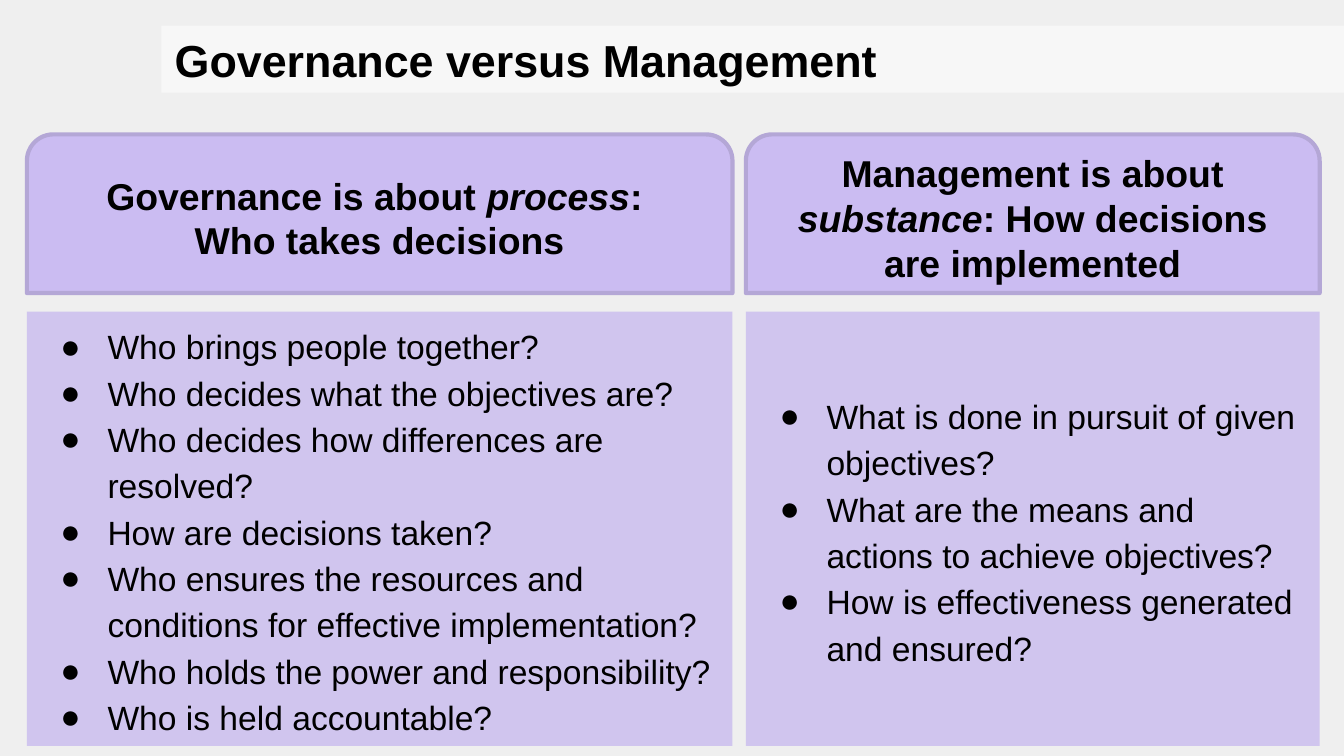
from pptx import Presentation
from pptx.dml.color import RGBColor
from pptx.enum.shapes import MSO_SHAPE
from pptx.enum.text import MSO_ANCHOR, MSO_AUTO_SIZE, PP_ALIGN
from pptx.oxml.ns import qn
from pptx.util import Pt
from lxml import etree

TAB_SHAPE = MSO_SHAPE.ROUND_2_SAME_RECTANGLE
MIDDLE = MSO_ANCHOR.MIDDLE
NO_AUTOFIT = MSO_AUTO_SIZE.NONE
LEFT, CENTER = PP_ALIGN.LEFT, PP_ALIGN.CENTER

BLACK = RGBColor(0x00, 0x00, 0x00)
WHITE = RGBColor(0xFF, 0xFF, 0xFF)
BACKGROUND = RGBColor(0xEF, 0xEF, 0xEF)
PANEL = RGBColor(0xC7, 0xB8, 0xEE)
HEADING = RGBColor(0xCB, 0xBC, 0xF2)
HEADING_LINE = RGBColor(0xB4, 0xA7, 0xD6)

FONT = "Arial"
INSET = Pt(7.2)
HEADING_TOP, HEADING_HEIGHT = 72, 85
LIST_TOP, LIST_HEIGHT = 167, 232.6

# Each heading line is a list of (text, italic) spans.
COLUMNS = [
    {
        "left": 14.4,
        "width": 378,
        "heading": [
            [("Governance is about ", False), ("process", True), (": ", False)],
            [("Who takes decisions", False)],
        ],
        "questions": [
            "Who brings people together?",
            "Who decides what the objectives are?",
            "Who decides how differences are resolved?",
            "How are decisions taken?",
            "Who ensures the resources and conditions for effective implementation?",
            "Who holds the power and responsibility?",
            "Who is held accountable?",
        ],
    },
    {
        "left": 399.6,
        "width": 307.4,
        "heading": [
            [
                ("Management is about ", False),
                ("substance", True),
                (": How decisions are implemented", False),
            ],
        ],
        "questions": [
            "What is done in pursuit of given objectives?",
            "What are the means and actions to achieve objectives?",
            "How is effectiveness generated and ensured?",
        ],
    },
]


def place(shape, left, top, width, height):
    shape.left, shape.top = Pt(left), Pt(top)
    shape.width, shape.height = Pt(width), Pt(height)


def fill_shape(shape, color, opacity=100):
    """Fill the shape with a solid colour; opacity is in percent."""
    shape.fill.solid()
    shape.fill.fore_color.rgb = color
    if opacity < 100:
        color_element = next(shape.element.spPr.iter(qn("a:srgbClr")))
        etree.SubElement(color_element, qn("a:alpha"), val=str(opacity * 1000))


def prepare_frame(shape):
    frame = shape.text_frame
    frame.word_wrap = True
    frame.auto_size = NO_AUTOFIT
    frame.vertical_anchor = MIDDLE
    frame.margin_left = frame.margin_right = INSET
    frame.margin_top = frame.margin_bottom = INSET
    return frame


def format_font(font, size, bold=False):
    font.name = FONT
    font.size = Pt(size)
    font.bold = bold
    font.color.rgb = BLACK


def add_bullet(para):
    properties = para._p.get_or_add_pPr()
    properties.set("marL", str(Pt(36)))
    properties.set("indent", str(Pt(-25.2)))
    bullet_color = etree.SubElement(properties, qn("a:buClr"))
    etree.SubElement(bullet_color, qn("a:srgbClr"), val=str(BLACK))
    etree.SubElement(properties, qn("a:buFont"), typeface=FONT)
    etree.SubElement(properties, qn("a:buChar"), char="●")


def set_title(title, text):
    place(title, 86.4, 13.7, 633.6, 36)
    fill_shape(title, WHITE, 55)
    frame = prepare_frame(title)
    frame.text = text
    para = frame.paragraphs[0]
    para.alignment = LEFT
    format_font(para.runs[0].font, 24, bold=True)


def add_heading(page, left, width, lines):
    heading = page.shapes.add_shape(
        TAB_SHAPE, Pt(left), Pt(HEADING_TOP), Pt(width), Pt(HEADING_HEIGHT)
    )
    heading.shadow.inherit = False
    fill_shape(heading, HEADING)
    heading.line.color.rgb = HEADING_LINE
    heading.line.width = Pt(2.25)
    frame = prepare_frame(heading)
    for index, spans in enumerate(lines):
        para = frame.add_paragraph() if index else frame.paragraphs[0]
        para.alignment = CENTER
        for text, italic in spans:
            span = para.add_run()
            span.text = text
            format_font(span.font, 20, bold=True)
            span.font.italic = italic


def fill_list(panel, left, width, questions):
    place(panel, left, LIST_TOP, width, LIST_HEIGHT)
    fill_shape(panel, PANEL, 76)
    frame = prepare_frame(panel)
    frame.text = "\n".join(questions)
    for para in frame.paragraphs:
        add_bullet(para)
        para.line_spacing = 1.15
        para.space_before = Pt(0)
        format_font(para.runs[0].font, 18)


def main():
    deck = Presentation()
    deck.slide_width, deck.slide_height = Pt(720), Pt(405)
    page = deck.slides.add_slide(deck.slide_layouts.get_by_name("Two Content"))
    page.background.fill.solid()
    page.background.fill.fore_color.rgb = BACKGROUND

    set_title(page.shapes.title, "Governance versus Management")
    for index, column in enumerate(COLUMNS, start=1):
        left, width = column["left"], column["width"]
        fill_list(page.placeholders[index], left, width, column["questions"])
        add_heading(page, left, width, column["heading"])

    deck.save("out.pptx")


if __name__ == "__main__":
    main()
